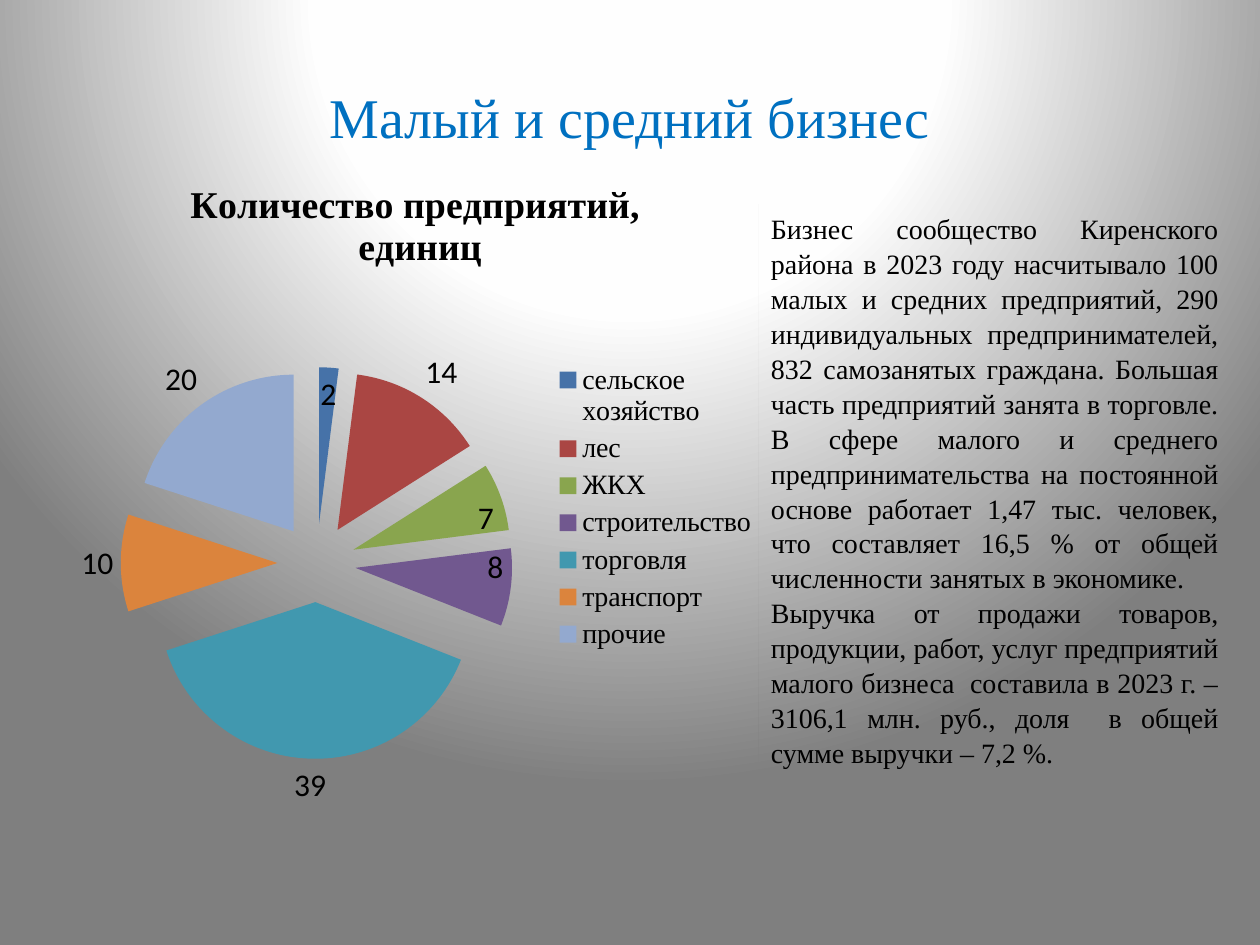
from pptx import Presentation
from pptx.chart.data import CategoryChartData
from pptx.dml.color import RGBColor
from pptx.enum.chart import XL_CHART_TYPE, XL_LABEL_POSITION as LabelPos, XL_LEGEND_POSITION
from pptx.enum.shapes import MSO_SHAPE
from pptx.enum.text import MSO_ANCHOR, PP_ALIGN
from pptx.oxml import parse_xml
from pptx.oxml.ns import nsdecls, qn
from pptx.util import Inches, Pt

COLORS = {"title": "0070C0", "text": "000000"}
SERIF = "Times New Roman"
GRADIENT = [(0, "FFFFFF"), (40, "FEFEFE"), (100, "7F7F7F")]
SECTORS = [
    ("сельское хозяйство", 2, "4672A8"),
    ("лес", 14, "AA4643"),
    ("ЖКХ", 7, "89A54E"),
    ("строительство ", 8, "71588F"),
    ("торговля", 39, "4198AF"),
    ("транспорт", 10, "DB843D"),
    ("прочие", 20, "93A9CF"),
]
OUTSIDE_LABELS = {"лес", "торговля", "транспорт", "прочие"}
STORY = [
    "Бизнес сообщество Киренского района в 2023 году насчитывало 100 малых и средних "
    "предприятий, 290 индивидуальных предпринимателей, 832 самозанятых граждана. "
    "Большая часть предприятий занята в торговле. ",
    "В сфере малого и среднего предпринимательства на постоянной основе работает "
    "1,47 тыс. человек, что составляет 16,5 % от общей численности занятых в экономике. ",
    "Выручка от продажи товаров, продукции, работ, услуг предприятий малого бизнеса  "
    "составила в 2023 г. – 3106,1 млн. руб., доля  в общей сумме выручки – 7,2 %.",
]


def style_font(font, size, name=SERIF, color="text", bold=False):
    font.size, font.name, font.bold = Pt(size), name, bold
    font.color.rgb = RGBColor.from_string(COLORS[color])


prs = Presentation()
prs.slide_width, prs.slide_height = Inches(10), Inches(7.5)
slide = prs.slides.add_slide(prs.slide_layouts[6])

# Background: circular gradient centred above the slide
slide.background.fill.gradient()
stops = "".join(
    f'<a:gs pos="{pos * 1000}"><a:srgbClr val="{color}"/></a:gs>' for pos, color in GRADIENT
)
circle = parse_xml(
    f'<a:gradFill {nsdecls("a")} rotWithShape="1"><a:gsLst>{stops}</a:gsLst><a:path path="circle">'
    '<a:fillToRect l="50000" t="-80000" r="50000" b="180000"/></a:path></a:gradFill>'
)
linear = next(slide._element.iter(qn("a:gradFill")))
linear.getparent().replace(linear, circle)

# Heading
heading = slide.shapes.add_textbox(Inches(0.5), Inches(0.3), Inches(9), Inches(1.25)).text_frame
heading.word_wrap = True
heading.vertical_anchor = MSO_ANCHOR.MIDDLE
heading.text = "Малый и средний бизнес"
heading.paragraphs[0].alignment = PP_ALIGN.CENTER
style_font(heading.paragraphs[0].runs[0].font, 32, color="title")

# Pie of enterprises by sector
data = CategoryChartData()
data.categories = [name for name, _, _ in SECTORS]
data.add_series("Series 1", [count for _, count, _ in SECTORS])
pie = slide.shapes.add_chart(
    XL_CHART_TYPE.PIE, Inches(0.5), Inches(1.25), Inches(5.67), Inches(5.55), data
).chart
style_font(pie.font, 18, "Calibri")

pie.has_title = True
pie_title = pie.chart_title.text_frame
pie_title.text = "Количество предприятий, \nединиц"
for line in pie_title.paragraphs:
    style_font(line.runs[0].font, 21.6, bold=True)

pie.has_legend = True
pie.legend.position = XL_LEGEND_POSITION.RIGHT
pie.legend.include_in_layout = False
style_font(pie.legend.font, 16)

plot = pie.plots[0]
plot.vary_by_categories = True
plot.has_data_labels = True
plot.data_labels.show_value = True
plot.data_labels.position = LabelPos.INSIDE_END
style_font(plot.data_labels.font, 18, "Calibri")

enterprises = plot.series[0]
enterprises._element.find(qn("c:tx")).addnext(
    parse_xml(f'<c:explosion {nsdecls("c")} val="25"/>')
)
for index, (name, _, color) in enumerate(SECTORS):
    sector = enterprises.points[index]
    sector.format.fill.solid()
    sector.format.fill.fore_color.rgb = RGBColor.from_string(color)
    sector.format.line.fill.background()
    label = sector.data_label
    label.position = LabelPos.OUTSIDE_END if name in OUTSIDE_LABELS else LabelPos.INSIDE_END
    style_font(label.font, 18, "Calibri")

plot_area = pie._chartSpace.chart.plotArea
for old_layout in plot_area.findall(qn("c:layout")):
    plot_area.remove(old_layout)
frame = {"x": 0.08, "y": 0.3, "w": 0.55, "h": 0.56}
modes = "".join(f'<c:{axis}Mode val="edge"/>' for axis in "xy")
sizes = "".join(f'<c:{side} val="{share}"/>' for side, share in frame.items())
plot_area.insert(0, parse_xml(
    f'<c:layout {nsdecls("c")}><c:manualLayout><c:layoutTarget val="inner"/>'
    f"{modes}{sizes}</c:manualLayout></c:layout>"
))

# Story panel, filled with the slide background
panel = slide.shapes.add_shape(
    MSO_SHAPE.RECTANGLE, Inches(6.02), Inches(1.62), Inches(3.75), Inches(5.35)
)
panel.shadow.inherit = False
panel.line.fill.background()
panel._element.set("useBgFill", "1")
story = panel.text_frame
story.word_wrap = True
story.vertical_anchor = MSO_ANCHOR.TOP
story.text = "\n".join(STORY)
for paragraph in story.paragraphs:
    paragraph.alignment = PP_ALIGN.JUSTIFY
    paragraph.line_spacing = 1.04
    style_font(paragraph.runs[0].font, 16)

prs.save("out.pptx")
